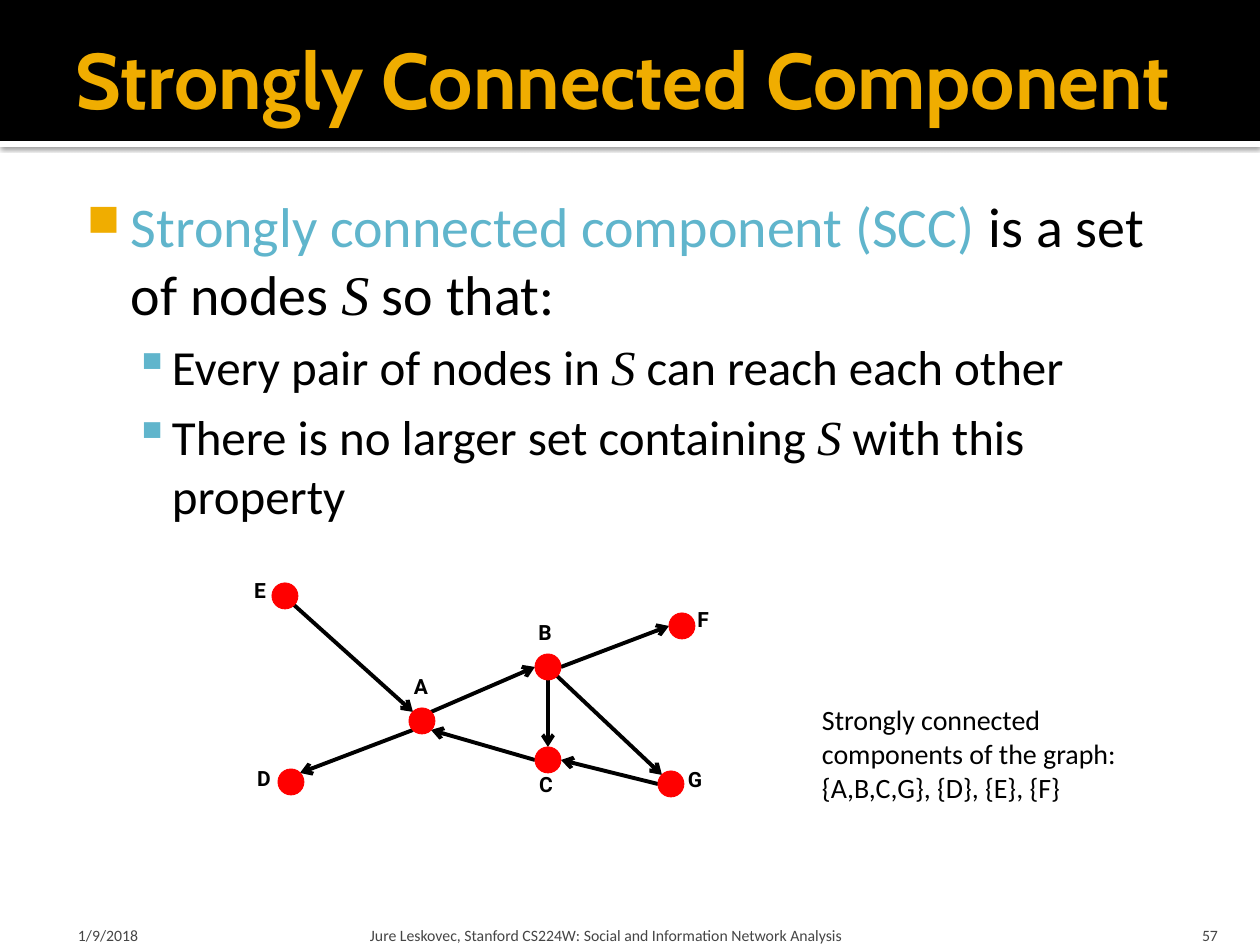
from lxml.etree import SubElement
from pptx import Presentation
from pptx.dml.color import RGBColor
from pptx.enum.shapes import MSO_CONNECTOR as Link, MSO_SHAPE as Preset
from pptx.enum.text import MSO_ANCHOR as Anchor, PP_ALIGN as Align
from pptx.oxml import parse_xml
from pptx.oxml.ns import nsdecls, qn
from pptx.util import Inches, Pt

PX = 914400 // 126
GOLD, BLUE, BLACK, GREY, RED = "F0AD00", "60B5CC", "000000", "454545", "FF0000"
rgb = RGBColor.from_string

deck = Presentation()
deck.slide_width, deck.slide_height = Inches(10), Inches(7.5)
slide = deck.slides.add_slide(deck.slide_layouts[6])


def add_solid(preset, box, color, outline=None):
    solid = slide.shapes.add_shape(preset, *[v * PX for v in box])
    solid.shadow.inherit = False
    solid.fill.solid()
    solid.fill.fore_color.rgb = rgb(color)
    if outline:
        solid.line.color.rgb = rgb(color)
        solid.line.width = Pt(outline)
    else:
        solid.line.fill.background()
    return solid


def add_text(paragraphs, box, *, size, font="Calibri", color=BLACK, bold=False,
             align=Align.LEFT, anchor=Anchor.TOP, insets=(13, 6, 13, 6)):
    """Each paragraph is (runs, options); each run is (words, overrides)."""
    frame = slide.shapes.add_textbox(*[v * PX for v in box]).text_frame
    frame.word_wrap = True
    frame.vertical_anchor = anchor
    (frame.margin_left, frame.margin_top,
     frame.margin_right, frame.margin_bottom) = [v * PX for v in insets]
    if isinstance(paragraphs, str):
        paragraphs = [([(paragraphs, {})], {})]
    for number, (runs, options) in enumerate(paragraphs):
        para = frame.add_paragraph() if number else frame.paragraphs[0]
        para.alignment = align
        for words, own in runs:
            run = para.add_run()
            run.text = words
            run.font.name = own.get("font", font)
            run.font.size = Pt(options.get("size", size))
            run.font.bold = bold
            run.font.italic = own.get("italic", False)
            run.font.color.rgb = rgb(own.get("color", color))
        if "bullet" in options:
            para.space_before = Pt(options["before"])
            props = para._p.get_or_add_pPr()
            props.set("marL", str(options["indent"] * PX))
            props.set("indent", str(-options["hang"] * PX))
            bullet_color = SubElement(props, qn("a:buClr"))
            SubElement(bullet_color, qn("a:srgbClr"), val=options["bullet_color"])
            SubElement(props, qn("a:buSzPct"), val=str(options["bullet_size"] * 1000))
            SubElement(props, qn("a:buChar"), char=options["bullet"])


# Header band with a soft shadow below its white rule
rule = add_solid(Preset.RECTANGLE, (0, 141, 1260, 6), "FFFFFF")
rule_props = rule._element.spPr
rule_props.remove(rule_props.find(qn("a:effectLst")))
rule_props.append(parse_xml(
    f'<a:effectLst {nsdecls("a")}><a:outerShdw blurRad="{Pt(2.5)}" dist="{Pt(0.8)}" '
    'dir="5400000" algn="tl" rotWithShape="0"><a:srgbClr val="000000">'
    '<a:alpha val="60000"/></a:srgbClr></a:outerShdw></a:effectLst>'))
add_solid(Preset.RECTANGLE, (0, 0, 1260, 141), BLACK)
add_text("Strongly Connected Component", (63, 10, 1134, 136), size=45, font="Cabin",
         color=GOLD, bold=True, anchor=Anchor.MIDDLE, insets=(13, 6, 6, 6))

# Definition
set_symbol = ("S", {"font": "Times New Roman", "italic": True})
main_point = dict(size=32, bullet="■", bullet_color=GOLD, bullet_size=80,
                  indent=60, hang=44, before=0)
condition = dict(size=28, bullet="▪", bullet_color=BLUE, bullet_size=100,
                 indent=101, hang=38, before=6)
add_text([
    ([("Strongly connected component (SCC)", {"color": BLUE}),
      (" is a set of nodes ", {}), set_symbol, (" so that:", {})], main_point),
    ([("Every pair of nodes in ", {}), set_symbol,
      (" can reach each other", {})], condition),
    ([("There is no larger set containing ", {}), set_symbol,
      (" with this property", {})], condition),
], (63, 179, 1134, 724), size=28, insets=(8, 13, 13, 6))

# Footer
for words, left, width, align, inset in [
    ("1/9/2018", 63, 294, Align.LEFT, 15),
    ("Jure Leskovec, Stanford CS224W: Social and Information Network Analysis",
     364, 759, Align.LEFT, 6),
    ("57", 1130, 101, Align.RIGHT, 13),
]:
    add_text(words, (left, 907, width, 38), size=9, color=GREY, align=align,
             anchor=Anchor.BOTTOM, insets=(inset, 6, inset, 0))

# Directed graph: node centre, then top left of its label
RADIUS = 13
nodes = {
    "A": ((422, 721), (404, 674)),
    "B": ((548, 667), (528, 620)),
    "C": ((548, 760), (529, 772)),
    "D": ((291, 782), (247, 766)),
    "E": ((285, 596), (243, 578)),
    "F": ((682, 626), (686, 607)),
    "G": ((671, 784), (678, 767)),
}
# Points on a node's rim where edges meet it
rim = {"N": (0, -RADIUS), "S": (0, RADIUS), "W": (-RADIUS, 0), "E": (RADIUS, 0),
       "NW": (-9, -9), "NE": (9, -9), "SW": (-9, 9), "SE": (9, 9)}
edges = [
    ("E", "SE", "A", "NW"), ("A", "NE", "B", "W"), ("B", "S", "C", "N"),
    ("C", "W", "A", "SE"), ("G", "W", "C", "E"), ("B", "E", "F", "W"),
    ("A", "SW", "D", "NE"), ("B", "SE", "G", "NW"),
]
for source, exit_side, target, entry_side in edges:
    ends = [(centre + offset) * PX
            for node, side in ((source, exit_side), (target, entry_side))
            for centre, offset in zip(nodes[node][0], rim[side])]
    edge = slide.shapes.add_connector(Link.STRAIGHT, *ends)
    edge.line.color.rgb = rgb(BLACK)
    edge.line.width = Pt(2.25)
    SubElement(edge.line._get_or_add_ln(), qn("a:tailEnd"), type="arrow")
    SubElement(edge._element.spPr, qn("a:effectLst"))

for name, ((x, y), label_corner) in nodes.items():
    add_text(name, (*label_corner, 34, 25), size=12, font="Roboto", bold=True,
             align=Align.CENTER, insets=(4, 0, 4, 0))
    add_solid(Preset.OVAL, (x - RADIUS, y - RADIUS, 2 * RADIUS, 2 * RADIUS), RED,
              outline=0.5)

add_text("Strongly connected components of the graph: {A,B,C,G}, {D}, {E}, {F}",
         (809, 697, 359, 115), size=16)

deck.save("out.pptx")
